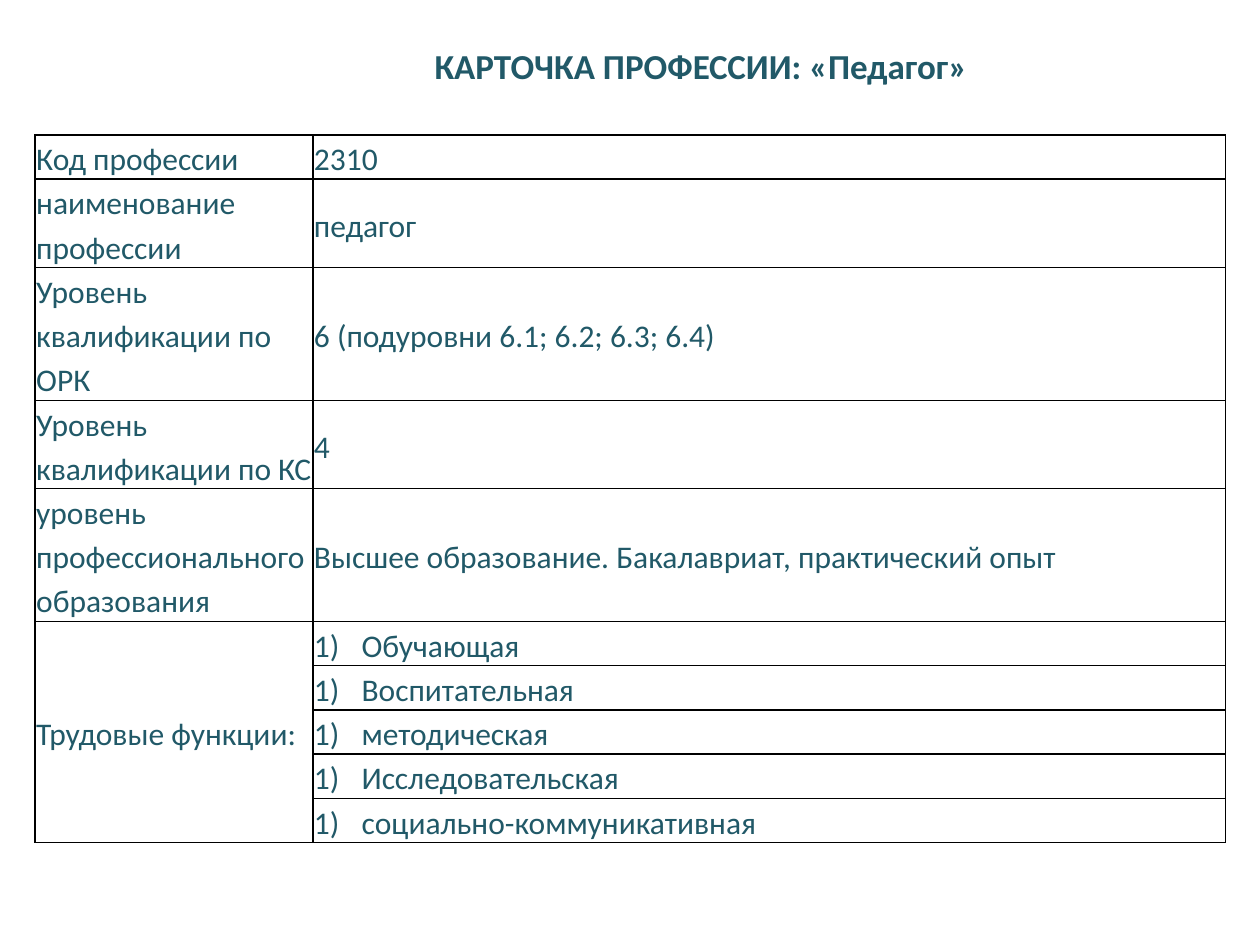
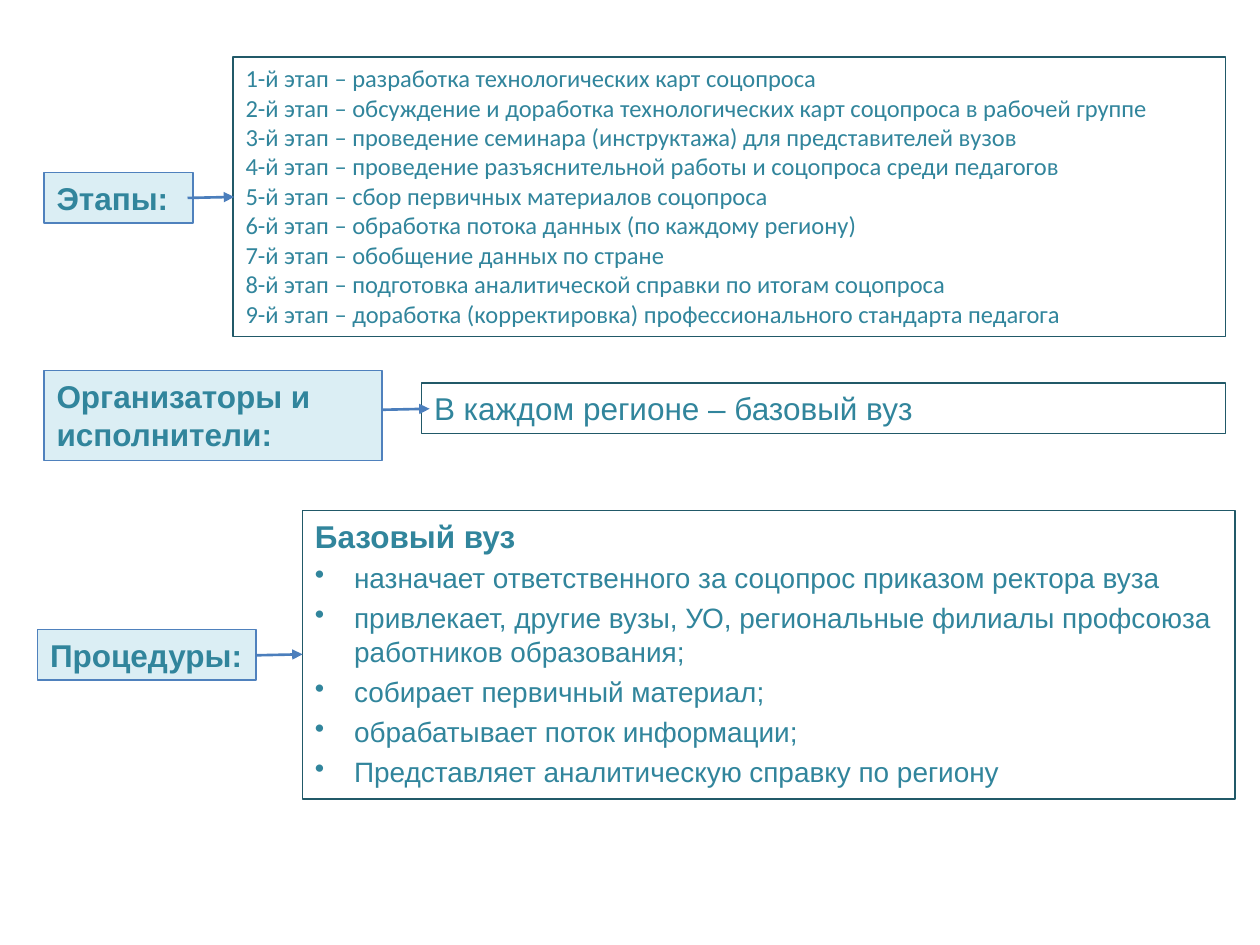
from typing import NamedTuple

from lxml.etree import SubElement
from pptx import Presentation
from pptx.dml.color import RGBColor
from pptx.enum.shapes import MSO_CONNECTOR, MSO_SHAPE
from pptx.enum.text import MSO_ANCHOR, MSO_AUTO_SIZE, PP_ALIGN
from pptx.oxml.ns import qn
from pptx.util import Cm, Pt

DARK_TEAL = "215968"
TEAL = "31859C"
PALE_BLUE = "DBEEF4"
LABEL_BORDER = "4F81BD"
ARROW_BLUE = "4B7EBC"
BLACK = "000000"
LINE_HEIGHT = 0.89
ARROW_RUN, ARROW_RISE = 0.94, 0.02


class Line(NamedTuple):
    text: str
    size: float = 18
    font: str = "Arial"
    bold: bool = False
    bullet: bool = False
    space: float = 3.7


class Box(NamedTuple):
    left: float
    top: float
    width: float
    height: float
    lines: list[Line]
    border: str = DARK_TEAL
    fill: str | None = None


class Row(NamedTuple):
    label: str
    value: str
    line_count: int


CARD_ROWS = [
    Row("Код профессии", "2310", 1),
    Row("наименование профессии", "педагог", 2),
    Row("Уровень квалификации по ОРК", "6 (подуровни 6.1; 6.2; 6.3; 6.4)", 3),
    Row("Уровень квалификации по КС", "4", 2),
    Row("уровень профессионального образования",
        "Высшее образование. Бакалавриат, практический опыт", 3),
]
FUNCTIONS_LABEL = "Трудовые функции:"
FUNCTIONS = ["Обучающая", "Воспитательная", "методическая", "Исследовательская",
             "социально-коммуникативная"]

STAGES = [
    "разработка технологических карт соцопроса",
    "обсуждение и доработка технологических карт соцопроса в рабочей группе",
    "проведение семинара (инструктажа) для представителей вузов",
    "проведение разъяснительной работы и соцопроса среди педагогов",
    "сбор первичных материалов соцопроса",
    "обработка потока данных (по каждому региону)",
    "обобщение данных по стране",
    "подготовка аналитической справки по итогам соцопроса",
    "доработка (корректировка) профессионального стандарта педагога",
]
PROCEDURES = [
    "назначает ответственного за соцопрос приказом ректора вуза",
    "привлекает, другие вузы, УО, региональные филиалы профсоюза работников образования;",
    "собирает первичный материал;",
    "обрабатывает поток информации;",
    "Представляет аналитическую справку по региону",
]


def label(left: float, top: float, width: float, height: float, text: str) -> Box:
    return Box(left, top, width, height, [Line(text, bold=True)], LABEL_BORDER, PALE_BLUE)


SURVEY_BOXES = [
    label(0.89, 3.48, 3, 1.02, "Этапы:"),
    label(0.76, 12.69, 4.4, 1.02, "Процедуры:"),
    label(0.89, 7.47, 6.81, 1.81, "Организаторы и исполнители:"),
    Box(4.7, 1.15, 20, 5.64,
        [Line(f"{number}-й этап – {stage}", 14, "Calibri", space=0)
         for number, stage in enumerate(STAGES, 1)]),
    Box(8.5, 7.72, 16.2, 1.02, [Line("В каждом регионе – базовый вуз")]),
    Box(6.1, 10.29, 18.8, 5.82,
        [Line("Базовый вуз", bold=True)]
        + [Line(procedure, 16, bullet=True) for procedure in PROCEDURES]),
]
ARROW_STARTS = [(5.16, 13.21), (7.72, 8.26), (3.78, 3.99)]


def color(value: str) -> RGBColor:
    return RGBColor.from_string(value)


def format_runs(paragraph, size: float, font: str, text_color: str, bold: bool = False) -> None:
    for run in paragraph.runs:
        run.font.size = Pt(size)
        run.font.name = font
        run.font.bold = bold
        run.font.color.rgb = color(text_color)


def add_bullet(paragraph, indent: float, tag: str, **attributes: str) -> None:
    properties = paragraph._p.get_or_add_pPr()
    properties.set("marL", str(Cm(indent)))
    properties.set("indent", str(-Cm(indent)))
    SubElement(properties, qn(tag), **attributes)


def fill_cell(cell, text: str, numbered: bool = False) -> None:
    cell.margin_left = cell.margin_right = Cm(0.02)
    cell.margin_top = cell.margin_bottom = 0
    cell.vertical_anchor = MSO_ANCHOR.MIDDLE
    cell.text_frame.text = text
    paragraph = cell.text_frame.paragraphs[0]
    paragraph.line_spacing = 1.15
    format_runs(paragraph, 18, "Calibri", DARK_TEAL)
    if numbered:
        add_bullet(paragraph, 0.96, "a:buAutoNum", type="arabicParenR")


def style_cell(cell) -> None:
    properties = cell._tc.get_or_add_tcPr()
    for side in ("a:lnL", "a:lnR", "a:lnT", "a:lnB"):
        border = SubElement(properties, qn(side), w=str(Pt(1)))
        SubElement(SubElement(border, qn("a:solidFill")), qn("a:srgbClr"), val=BLACK)
    cell.fill.background()


def add_card_table(slide) -> None:
    heights = [row.line_count for row in CARD_ROWS] + [1] * len(FUNCTIONS)
    table = slide.shapes.add_table(len(heights), 2, Cm(0.71), Cm(2.72), Cm(24),
                                   Cm(LINE_HEIGHT * sum(heights))).table
    table.first_row = table.horz_banding = False
    for column, width in zip(table.columns, (5.6, 18.4)):
        column.width = Cm(width)
    for table_row, line_count in zip(table.rows, heights):
        table_row.height = Cm(LINE_HEIGHT * line_count)
    for index, row in enumerate(CARD_ROWS):
        fill_cell(table.cell(index, 0), row.label)
        fill_cell(table.cell(index, 1), row.value)
    first = len(CARD_ROWS)
    table.cell(first, 0).merge(table.cell(len(heights) - 1, 0))
    fill_cell(table.cell(first, 0), FUNCTIONS_LABEL)
    for index, function in enumerate(FUNCTIONS, first):
        fill_cell(table.cell(index, 1), function, numbered=True)
    for cell in table.iter_cells():
        style_cell(cell)


def add_title(slide, text: str) -> None:
    text_frame = slide.shapes.add_textbox(Cm(8.51), Cm(0.76), Cm(11.35), Cm(1.12)).text_frame
    text_frame.word_wrap = False
    text_frame.auto_size = MSO_AUTO_SIZE.SHAPE_TO_FIT_TEXT
    text_frame.vertical_anchor = MSO_ANCHOR.MIDDLE
    text_frame.text = text
    format_runs(text_frame.paragraphs[0], 20, "Calibri", DARK_TEAL, bold=True)


def add_box(slide, box: Box) -> None:
    shape = slide.shapes.add_shape(MSO_SHAPE.RECTANGLE, Cm(box.left), Cm(box.top),
                                   Cm(box.width), Cm(box.height))
    shape.shadow.inherit = False
    shape.line.color.rgb = color(box.border)
    shape.line.width = Pt(0.75)
    if box.fill:
        shape.fill.solid()
        shape.fill.fore_color.rgb = color(box.fill)
    else:
        shape.fill.background()
    text_frame = shape.text_frame
    text_frame.word_wrap = True
    text_frame.auto_size = MSO_AUTO_SIZE.SHAPE_TO_FIT_TEXT
    text_frame.vertical_anchor = MSO_ANCHOR.TOP
    text_frame.text = "\n".join(line.text for line in box.lines)
    for paragraph, line in zip(text_frame.paragraphs, box.lines):
        paragraph.alignment = PP_ALIGN.LEFT
        paragraph.space_before = Pt(line.space)
        format_runs(paragraph, line.size, line.font, TEAL, line.bold)
        if line.bullet:
            add_bullet(paragraph, 0.79, "a:buChar", char="•")


def add_arrow(slide, left: float, top: float) -> None:
    arrow = slide.shapes.add_connector(MSO_CONNECTOR.STRAIGHT, Cm(left), Cm(top),
                                       Cm(left + ARROW_RUN), Cm(top - ARROW_RISE))
    arrow.line.color.rgb = color(ARROW_BLUE)
    arrow.line.width = Pt(1.5)
    SubElement(arrow.line._get_or_add_ln(), qn("a:tailEnd"), type="triangle")
    SubElement(arrow._element.spPr, qn("a:effectLst"))


def main() -> None:
    presentation = Presentation()
    presentation.slide_width, presentation.slide_height = Cm(25.4), Cm(19.05)
    blank = presentation.slide_layouts[6]

    card_slide = presentation.slides.add_slide(blank)
    add_card_table(card_slide)
    add_title(card_slide, "КАРТОЧКА ПРОФЕССИИ: «Педагог»")

    survey_slide = presentation.slides.add_slide(blank)
    for box in SURVEY_BOXES:
        add_box(survey_slide, box)
    for left, top in ARROW_STARTS:
        add_arrow(survey_slide, left, top)

    presentation.save("out.pptx")


if __name__ == "__main__":
    main()
